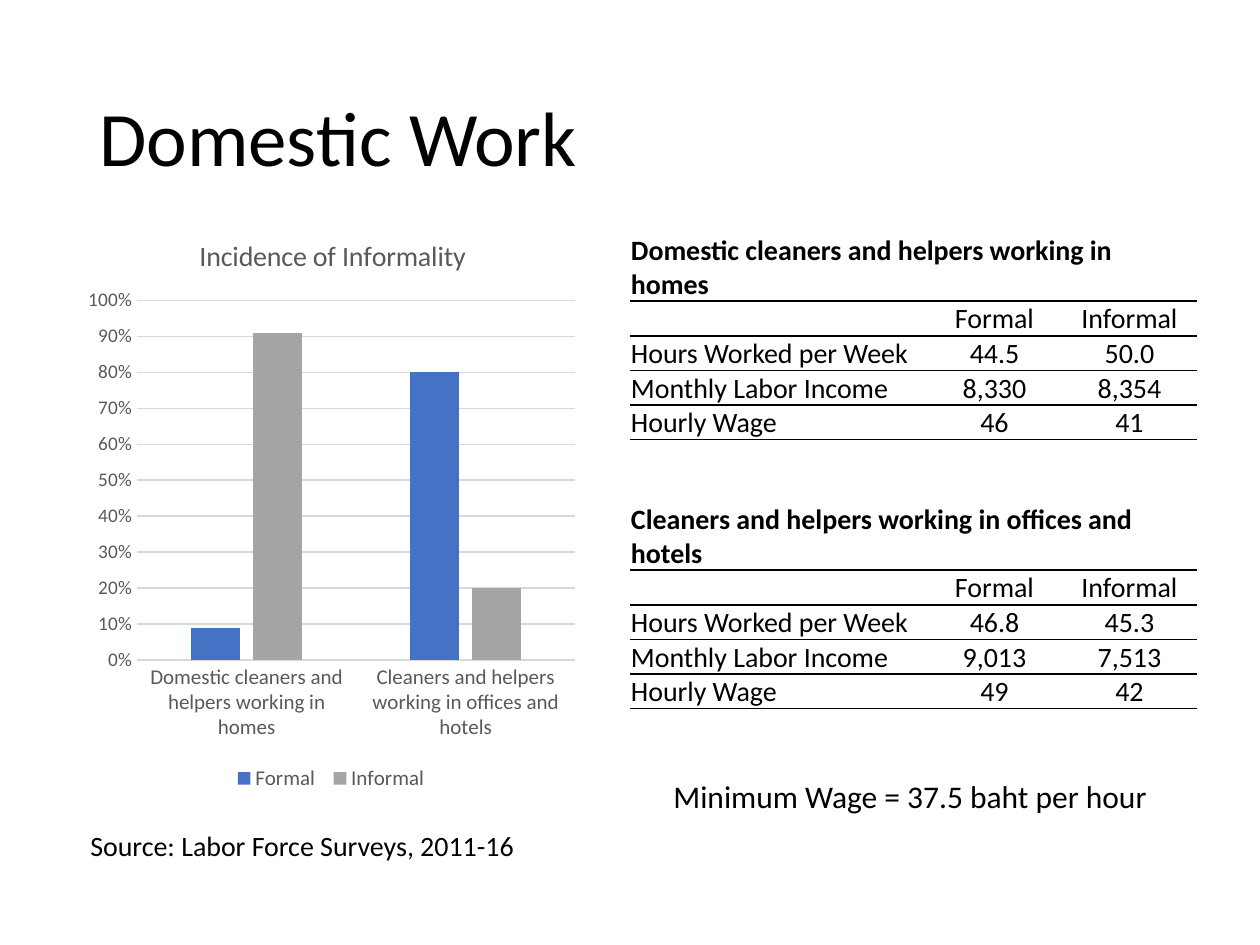
from dataclasses import dataclass

from lxml import etree
from pptx import Presentation
from pptx.chart.data import CategoryChartData
from pptx.dml.color import RGBColor
from pptx.enum.chart import XL_CHART_TYPE, XL_LEGEND_POSITION, XL_TICK_MARK
from pptx.enum.text import MSO_ANCHOR, MSO_AUTO_SIZE, PP_ALIGN
from pptx.oxml.ns import qn
from pptx.util import Emu, Pt

BLACK = RGBColor(0x00, 0x00, 0x00)
GRAY_TEXT = RGBColor(0x59, 0x59, 0x59)
GRID_GRAY = RGBColor(0xD9, 0xD9, 0xD9)
FORMAL_BLUE = RGBColor(0x44, 0x72, 0xC4)
INFORMAL_GRAY = RGBColor(0xA5, 0xA5, 0xA5)

LEFT, CENTER = PP_ALIGN.LEFT, PP_ALIGN.CENTER
MIDDLE, BOTTOM = MSO_ANCHOR.MIDDLE, MSO_ANCHOR.BOTTOM
NO_TICK = XL_TICK_MARK.NONE
COLUMNS = XL_CHART_TYPE.COLUMN_CLUSTERED
LEGEND_BOTTOM = XL_LEGEND_POSITION.BOTTOM
FIT_TEXT = MSO_AUTO_SIZE.SHAPE_TO_FIT_TEXT

FONT = "Calibri"
PX_PER_INCH = 126
PLAIN_TABLE_STYLE = "{2D5ABB26-0587-4C30-8999-92F81FD0307C}"
COLUMN_WIDTHS = (297, 135, 135)
ROW_HEIGHT = 28
RULED_ROWS = (0, 1, 2, 4)


@dataclass(frozen=True)
class Box:
    left: int
    top: int
    width: int
    height: int

    def emu(self) -> tuple:
        return tuple(px(n) for n in (self.left, self.top, self.width, self.height))


@dataclass(frozen=True)
class WageTable:
    heading: str
    box: Box
    hours: tuple
    income: tuple
    wage: tuple

    def rows(self) -> list:
        return [
            (self.heading, "", ""),
            ("", "Formal", "Informal"),
            ("Hours Worked per Week", *self.hours),
            ("Monthly Labor Income", *self.income),
            ("Hourly Wage", *self.wage),
        ]


@dataclass(frozen=True)
class Group:
    name: str
    shares: tuple
    color: RGBColor


CLEANERS_AT_HOME = "Domestic cleaners and helpers working in homes"
CLEANERS_ELSEWHERE = "Cleaners and helpers working in offices and hotels"
WAGE_TABLES = [
    WageTable(CLEANERS_AT_HOME, Box(630, 233, 567, 208),
              ("44.5", "50.0"), ("8,330", "8,354"), ("46", "41")),
    WageTable(CLEANERS_ELSEWHERE, Box(630, 502, 567, 208),
              ("46.8", "45.3"), ("9,013", "7,513"), ("49", "42")),
]
GROUPS = [
    Group("Formal ", (0.09, 0.8), FORMAL_BLUE),
    Group("Informal", (0.91, 0.2), INFORMAL_GRAY),
]


def px(count: int) -> Emu:
    return Emu(round(count * 914400 / PX_PER_INCH))


def style_font(font, size: int, color: RGBColor = BLACK, bold: bool = False) -> None:
    font.name, font.size, font.bold = FONT, Pt(size), bold
    font.color.rgb = color


def write_text(frame, text: str, *, size: int, color: RGBColor = BLACK,
               bold: bool = False, align=LEFT, line_spacing=None) -> None:
    paragraph = frame.paragraphs[0]
    paragraph.alignment = align
    if line_spacing:
        paragraph.line_spacing = line_spacing
    if text:
        run = paragraph.add_run()
        run.text = text
        style_font(run.font, size, color, bold)
    else:
        etree.SubElement(paragraph._p, qn("a:endParaRPr"), sz=str(size * 100))


def add_text(slide, box: Box, text: str, *, wrap: bool = False, anchor=None, **text_format) -> None:
    frame = slide.shapes.add_textbox(*box.emu()).text_frame
    frame.word_wrap = wrap
    if anchor is not None:
        frame.vertical_anchor = anchor
    if not wrap:
        frame.auto_size = FIT_TEXT
    write_text(frame, text, **text_format)


def add_rule(cell, side: str) -> None:
    line = etree.SubElement(cell._tc.get_or_add_tcPr(), qn(f"a:{side}"), w=str(Pt(1)))
    fill = etree.SubElement(line, qn("a:solidFill"))
    etree.SubElement(fill, qn("a:srgbClr"), val=str(BLACK))


def add_wage_table(slide, wages: WageTable) -> None:
    rows = wages.rows()
    holder = slide.shapes.add_table(len(rows), len(COLUMN_WIDTHS), *wages.box.emu())
    table = holder.table
    table.first_row = table.horz_banding = False
    table._tbl.tblPr.find(qn("a:tableStyleId")).text = PLAIN_TABLE_STYLE
    for column, width in zip(table.columns, COLUMN_WIDTHS):
        column.width = px(width)
    for row in table.rows:
        row.height = px(ROW_HEIGHT)
    holder.height = px(wages.box.height)
    table.cell(0, 0).merge(table.cell(0, len(COLUMN_WIDTHS) - 1))
    for r, values in enumerate(rows):
        for c, value in enumerate(values):
            cell = table.cell(r, c)
            cell.margin_left = cell.margin_right = cell.margin_top = px(1)
            cell.margin_bottom = px(0)
            cell.vertical_anchor = BOTTOM
            if r - 1 in RULED_ROWS:
                add_rule(cell, "lnT")
            if r in RULED_ROWS:
                add_rule(cell, "lnB")
            cell.fill.background()
            write_text(cell.text_frame, value, size=16, bold=r == 0,
                       align=CENTER if c else LEFT)


def place_in_chart(part, **settings) -> None:
    layout = part.find(qn("c:layout"))
    if layout is None:
        layout = etree.Element(qn("c:layout"))
        part.insert(0, layout)
    manual = etree.SubElement(layout, qn("c:manualLayout"))
    for name, value in settings.items():
        etree.SubElement(manual, qn(f"c:{name}"), val=str(value))


def add_informality_chart(slide, box: Box) -> None:
    data = CategoryChartData(number_format="0%")
    data.categories = [CLEANERS_AT_HOME, CLEANERS_ELSEWHERE]
    for group in GROUPS:
        data.add_series(group.name, group.shares)
    chart = slide.shapes.add_chart(COLUMNS, *box.emu(), data).chart
    style_font(chart.font, 10)

    chart.has_title = True
    write_text(chart.chart_title.text_frame, "Incidence of Informality",
               size=16, color=GRAY_TEXT, align=CENTER)
    place_in_chart(chart.chart_title._element, xMode="edge", yMode="edge", x=0.23, y=0.04)
    place_in_chart(chart.element.find(".//" + qn("c:plotArea")), layoutTarget="inner",
                   xMode="edge", yMode="edge", x=0.117, y=0.157, w=0.866, h=0.612)

    chart.has_legend = True
    chart.legend.position = LEGEND_BOTTOM
    chart.legend.include_in_layout = False
    style_font(chart.legend.font, 12, GRAY_TEXT)

    plot = chart.plots[0]
    plot.gap_width, plot.overlap, plot.vary_by_categories = 219, -27, False
    for series, group in zip(plot.series, GROUPS):
        series.format.fill.solid()
        series.format.fill.fore_color.rgb = group.color

    shares, workers = chart.value_axis, chart.category_axis
    for axis, size in ((shares, 11), (workers, 12)):
        axis.major_tick_mark = axis.minor_tick_mark = NO_TICK
        style_font(axis.tick_labels.font, size, GRAY_TEXT)
    shares.minimum_scale, shares.maximum_scale, shares.major_unit = 0, 1, 0.1
    shares.tick_labels.number_format = "0%"
    shares.tick_labels.number_format_is_linked = False
    shares.format.line.fill.background()
    for line in (workers.format.line, shares.major_gridlines.format.line):
        line.color.rgb = GRID_GRAY
        line.width = Pt(0.75)


def main() -> None:
    deck = Presentation()
    deck.slide_width, deck.slide_height = px(1260), px(945)
    slide = deck.slides.add_slide(deck.slide_layouts[6])
    add_text(slide, Box(87, 50, 1086, 183), "Domestic Work", wrap=True,
             anchor=MIDDLE, size=44, line_spacing=0.9)
    for wages in WAGE_TABLES:
        add_wage_table(slide, wages)
    add_informality_chart(slide, Box(78, 208, 506, 588))
    add_text(slide, Box(661, 771, 505, 50), "Minimum Wage = 37.5 baht per hour", size=18)
    add_text(slide, Box(78, 822, 455, 47), "Source: Labor Force Surveys, 2011-16", size=16)
    deck.save("out.pptx")


if __name__ == "__main__":
    main()
